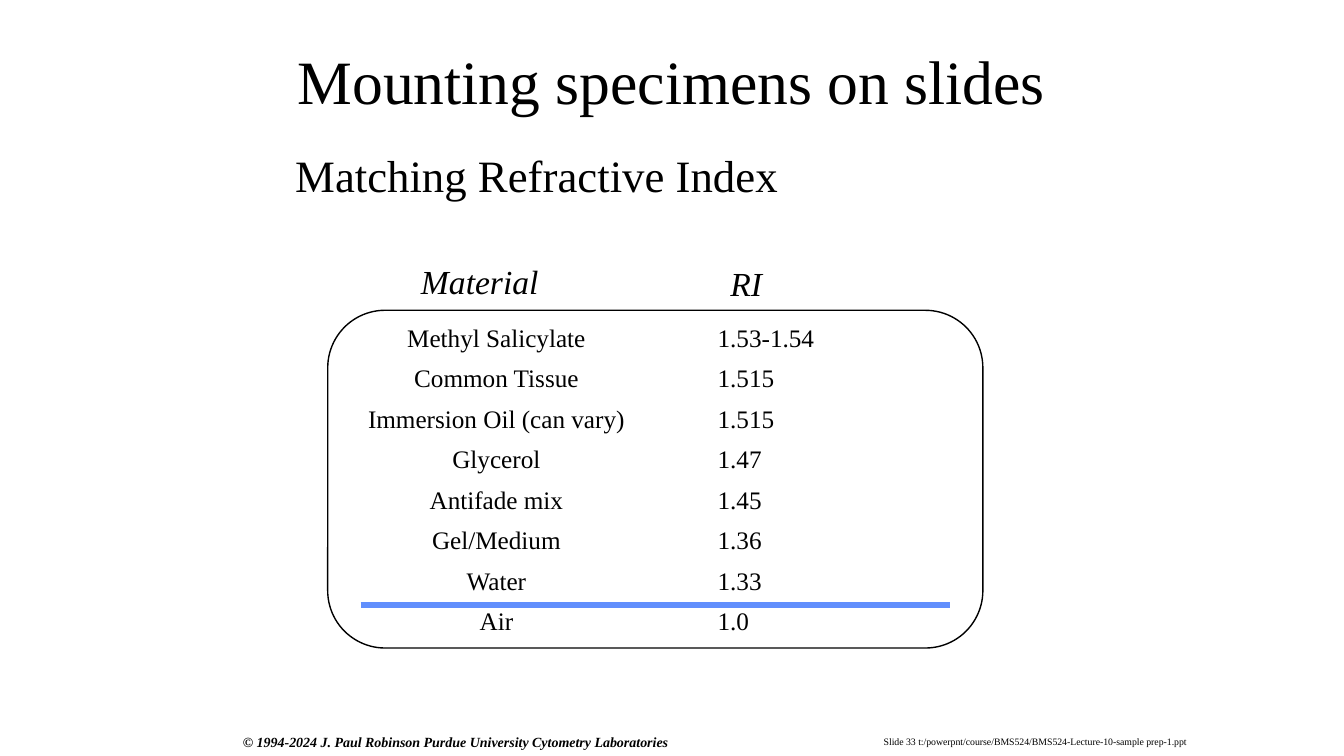
from dataclasses import dataclass

from lxml.etree import SubElement
from pptx import Presentation
from pptx.dml.color import RGBColor
from pptx.enum.shapes import MSO_CONNECTOR as Connector, MSO_SHAPE as Shape
from pptx.enum.text import MSO_ANCHOR as Anchor, PP_ALIGN as Align
from pptx.oxml.ns import qn
from pptx.util import Cm, Pt


@dataclass(frozen=True)
class Theme:
    typeface: str = "Times New Roman"
    ink: RGBColor = RGBColor(0, 0, 0)
    accent: RGBColor = RGBColor(0x61, 0x8F, 0xFD)
    title: Pt = Pt(44)
    subtitle: Pt = Pt(32)
    heading: Pt = Pt(24)
    entry: Pt = Pt(18)
    copyright: Pt = Pt(10)
    source: Pt = Pt(7)
    outline: Pt = Pt(1)
    divider: Pt = Pt(4.5)


THEME = Theme()

MATERIALS = [
    ("Methyl Salicylate", "1.53-1.54"),
    ("Common Tissue", "1.515"),
    ("Immersion Oil (can vary)", "1.515"),
    ("Glycerol", "1.47"),
    ("Antifade mix", "1.45"),
    ("Gel/Medium", "1.36"),
    ("Water", "1.33"),
    ("Air", "1.0"),
]


def write(frame, wording, size, align=Align.LEFT, **style):
    paragraph = frame.paragraphs[0]
    paragraph.text = wording
    paragraph.alignment = align
    look = {"name": THEME.typeface, "size": size, **style}
    for attribute, value in look.items():
        setattr(paragraph.font, attribute, value)
    paragraph.font.color.rgb = THEME.ink


def add_label(slide, wording, box, size, wrap=False, anchor=Anchor.TOP, **style):
    frame = slide.shapes.add_textbox(*map(Cm, box)).text_frame
    frame.word_wrap = wrap
    frame.vertical_anchor = anchor
    write(frame, wording, size, **style)


def add_index_table(slide, left, top, widths, row_height):
    table = slide.shapes.add_table(
        len(MATERIALS), len(widths), Cm(left), Cm(top),
        Cm(sum(widths)), Cm(row_height * len(MATERIALS)),
    ).table
    table.first_row = table.horz_banding = False
    for column, width in zip(table.columns, widths):
        column.width = Cm(width)
    for row, entries in enumerate(MATERIALS):
        table.rows[row].height = Cm(row_height)
        for column, (entry, align) in enumerate(zip(entries, (Align.CENTER, Align.LEFT))):
            cell = table.cell(row, column)
            cell.fill.background()
            cell.vertical_anchor = Anchor.MIDDLE
            write(cell.text_frame, entry, THEME.entry, align)


def add_divider(slide, left, right, height):
    divider = slide.shapes.add_connector(
        Connector.STRAIGHT, Cm(left), Cm(height), Cm(right), Cm(height))
    divider.line.color.rgb = THEME.accent
    divider.line.width = THEME.divider
    SubElement(divider._element.spPr, qn("a:effectLst"))


def add_frame(slide, box):
    frame = slide.shapes.add_shape(Shape.ROUNDED_RECTANGLE, *map(Cm, box))
    frame.adjustments[0] = 0.17
    frame.shadow.inherit = False
    frame.fill.background()
    frame.line.color.rgb = THEME.ink
    frame.line.width = THEME.outline


def main():
    deck = Presentation()
    deck.slide_width, deck.slide_height = Cm(33.87), Cm(19.05)
    slide = deck.slides.add_slide(deck.slide_layouts[6])

    add_label(slide, "Slide 33 t:/powerpnt/course/BMS524/BMS524-Lecture-10-sample prep-1.ppt",
              (22.02, 18.42, 8.41, 0.56), THEME.source)
    add_label(slide, "© 1994-2024 J. Paul Robinson Purdue University Cytometry Laboratories",
              (5.87, 18.36, 11.35, 0.69), THEME.copyright, bold=True, italic=True)
    add_label(slide, "Mounting specimens on slides", (5.92, 0.43, 22.02, 3.18),
              THEME.title, wrap=True, anchor=Anchor.MIDDLE, align=Align.CENTER)
    add_label(slide, "Matching Refractive Index", (7.19, 3.61, 19.2, 12.5),
              THEME.subtitle, wrap=True)
    add_index_table(slide, 7.19, 8.03, (10.64, 8.56), 1.02)
    add_divider(slide, 9.09, 23.93, 15.24)
    add_frame(slide, (8.26, 7.82, 16.51, 8.51))
    add_label(slide, "Material", (10.36, 6.45, 3.51, 1.27), THEME.heading, italic=True)
    add_label(slide, "RI", (18.16, 6.5, 1.32, 1.27), THEME.heading, italic=True)

    deck.save("out.pptx")


if __name__ == "__main__":
    main()
